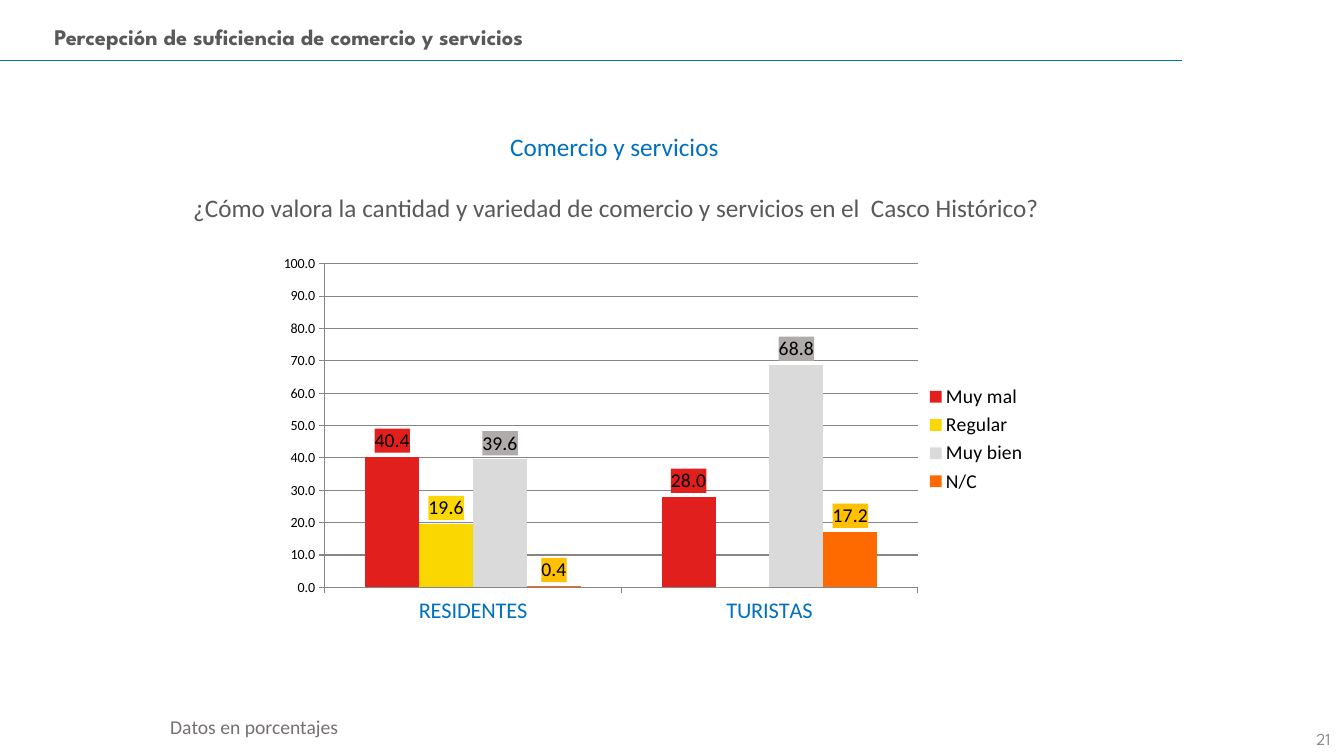
from lxml import etree
from pptx import Presentation
from pptx import util as u
from pptx.chart import data
from pptx.dml import color
from pptx.enum import chart as ch
from pptx.enum import shapes, text
from pptx.oxml import ns, parse_xml

CATS = ["RESIDENTES", "TURISTAS"]
SERIES = [
    ("Muy mal", (40.4, 28), "E11F1D", "E11F1D"),
    ("Regular", (19.6, 0), "FAD701", "FAD701"),
    ("Muy bien", (39.6, 68.8), "DADADA", "AFABAB"),
    ("N/C", (0.4, 17.2), "FF6A00", "FFC000"),
]
PLOT = {"x": 0.064, "y": 0.075, "w": 0.779, "h": 0.785}
GREY = "868686"


def rgb(code):
    return color.RGBColor.from_string(code)


def setall(obj, vals):
    for key, val in vals.items():
        setattr(obj, key, val)


def style(font, size, tint, face="Calibri", bold=False):
    setall(font, {"size": u.Pt(size), "name": face, "bold": bold})
    font.color.rgb = rgb(tint)


def box(slide, words, place, size, tint, face="Calibri", bold=False,
        align=text.PP_ALIGN.LEFT, anchor=text.MSO_ANCHOR.TOP):
    frame = slide.shapes.add_textbox(*map(u.Cm, place)).text_frame
    setall(frame, {"word_wrap": True, "vertical_anchor": anchor})
    para = frame.paragraphs[0]
    para.alignment = align
    run = para.add_run()
    run.text = words
    style(run.font, size, tint, face, bold)


def rule(slide, ends, tint):
    line = slide.shapes.add_connector(shapes.MSO_CONNECTOR.STRAIGHT, *map(u.Cm, ends))
    line.line.color.rgb = rgb(tint)
    line.line.width = u.Pt(1)
    etree.SubElement(line._element.spPr, ns.qn("a:effectLst"))


def layout(chart):
    area = chart._chartSpace.chart.plotArea
    for old in area.findall(ns.qn("c:layout")):
        area.remove(old)
    dims = "".join(f'<c:{key} val="{val}"/>' for key, val in PLOT.items())
    area.insert(0, parse_xml(
        f'<c:layout {ns.nsdecls("c")}><c:manualLayout><c:layoutTarget val="inner"/>'
        f'<c:xMode val="edge"/><c:yMode val="edge"/>{dims}</c:manualLayout></c:layout>'))


def label(series, tint):
    tags = series.data_labels
    setall(tags, {"show_value": True, "number_format": "0.0",
                  "number_format_is_linked": False,
                  "position": ch.XL_LABEL_POSITION.OUTSIDE_END})
    style(tags.font, 14, "000000")
    node = tags._element
    node.find(ns.qn("c:numFmt")).addnext(parse_xml(
        f'<c:spPr {ns.nsdecls("c", "a")}><a:solidFill><a:srgbClr val="{tint}"/>'
        '</a:solidFill></c:spPr>'))
    for spot, val in enumerate(series.values):
        if not val:
            node.insert(0, parse_xml(
                f'<c:dLbl {ns.nsdecls("c")}><c:idx val="{spot}"/>'
                '<c:delete val="1"/></c:dLbl>'))


def axes(chart):
    val, cat = chart.value_axis, chart.category_axis
    setall(val, {"minimum_scale": 0, "maximum_scale": 100, "major_unit": 10,
                 "has_major_gridlines": True})
    setall(val.tick_labels, {"number_format": "0.0", "number_format_is_linked": False})
    val.major_gridlines.format.line.color.rgb = rgb(GREY)
    for axis, size, tint in ((val, 10, "000000"), (cat, 16, "0070C0")):
        setall(axis, {"major_tick_mark": ch.XL_TICK_MARK.OUTSIDE,
                      "minor_tick_mark": ch.XL_TICK_MARK.NONE})
        axis.format.line.color.rgb = rgb(GREY)
        style(axis.tick_labels.font, size, tint)


def bars(slide, place):
    table = data.CategoryChartData(number_format="0.0")
    table.categories = CATS
    for name, vals, *_ in SERIES:
        table.add_series(name, vals)
    chart = slide.shapes.add_chart(
        ch.XL_CHART_TYPE.COLUMN_CLUSTERED, *map(u.Cm, place), table).chart
    setall(chart, {"has_title": False, "has_legend": True})
    style(chart.font, 10, "000000")
    setall(chart.legend, {"position": ch.XL_LEGEND_POSITION.RIGHT,
                          "include_in_layout": False})
    style(chart.legend.font, 14, "000000")
    plot = chart.plots[0]
    setall(plot, {"gap_width": 150, "overlap": 0, "vary_by_categories": False})
    for series, (_, _, fill, tag) in zip(plot.series, SERIES):
        series.format.fill.solid()
        series.format.fill.fore_color.rgb = rgb(fill)
        label(series, tag)
    axes(chart)
    layout(chart)


def main():
    deck = Presentation()
    setall(deck, {"slide_width": u.Cm(33.87), "slide_height": u.Cm(19.05)})
    slide = deck.slides.add_slide(deck.slide_layouts[6])
    rule(slide, (0, 1.52, 29.79, 1.52), "00719A")
    box(slide, "Percepción de suficiencia de comercio y servicios",
        (1.12, 0.46, 29.67, 0.94), 16, "595959", "League Spartan", True)
    box(slide, "21", (26.16, 17.98, 7.62, 1.02), 12, "8C8C8C", "League Spartan",
        align=text.PP_ALIGN.RIGHT, anchor=text.MSO_ANCHOR.BOTTOM)
    box(slide, "Comercio y servicios", (3.89, 3.18, 23.19, 1.02), 18, "0070C0",
        align=text.PP_ALIGN.CENTER)
    box(slide, "¿Cómo valora la cantidad y variedad de comercio y servicios "
        "en el  Casco Histórico?", (4.62, 4.72, 22.66, 1.02), 18, "595959")
    bars(slide, (6.96, 5.87, 19.18, 10.39))
    box(slide, "Datos en porcentajes", (4.04, 17.88, 24.33, 0.86), 14, "767171")
    deck.save("out.pptx")


if __name__ == "__main__":
    main()
